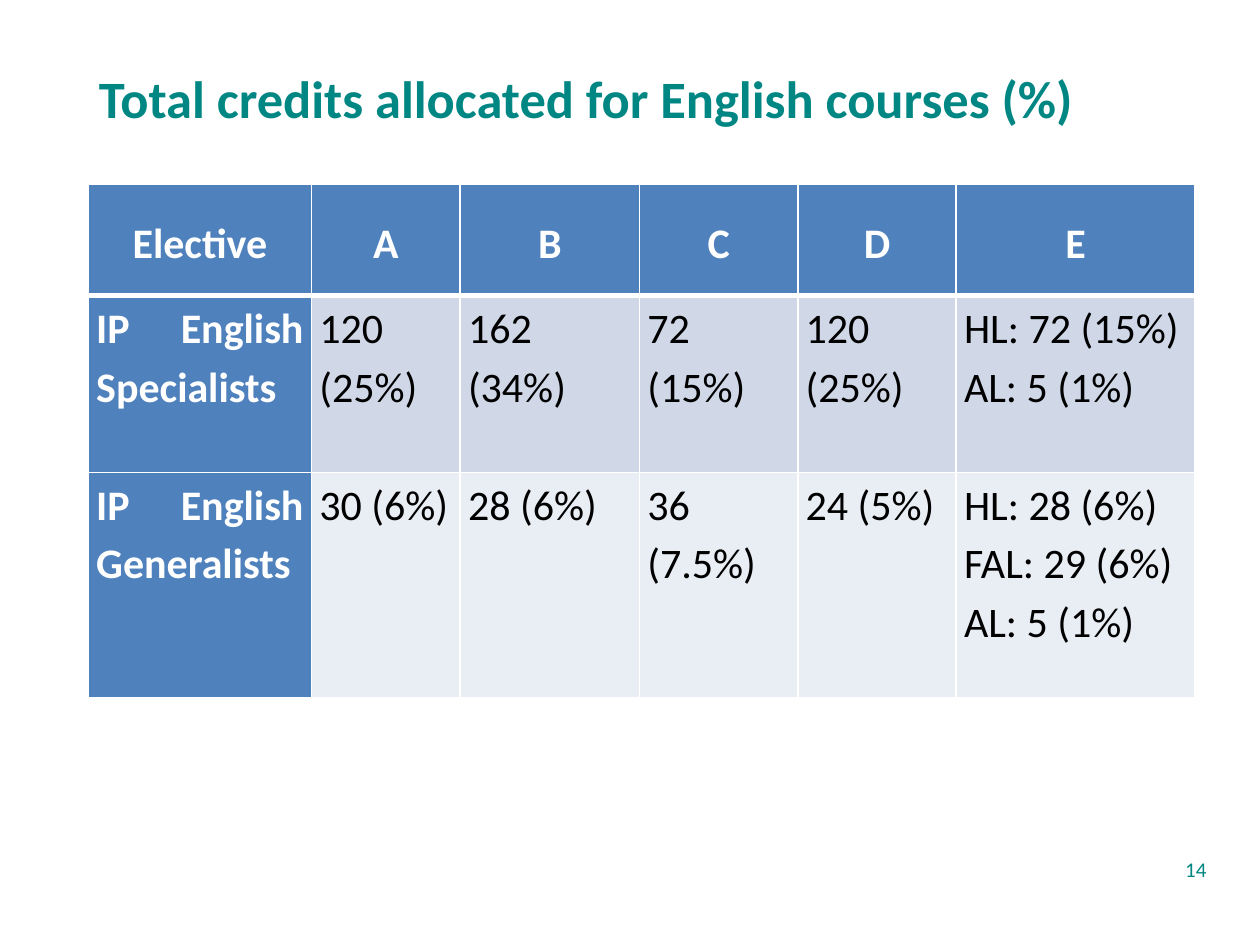
from dataclasses import dataclass

from lxml.etree import SubElement
from pptx import Presentation
from pptx.dml.color import RGBColor
from pptx.enum.text import MSO_ANCHOR as Anchor, PP_ALIGN as Align
from pptx.oxml.ns import qn
from pptx.util import Pt


@dataclass(frozen=True)
class Theme:
    font: str = "Calibri"
    accent: str = "008784"
    header: str = "4F81BD"
    bands: tuple = ("D0D8E8", "E9EDF4")
    light: str = "FFFFFF"
    dark: str = "000000"
    title_size: int = 30
    table_size: int = 24
    number_size: int = 12
    line_spacing: float = 1.15


class Deck:
    def __init__(self, theme):
        self.theme = theme
        self.prs = Presentation()
        self.prs.slide_width, self.prs.slide_height = Pt(720), Pt(540)
        self.s = self.prs.slides.add_slide(self.prs.slide_layouts[6])

    def style(self, p, size, color, bold=False, align=Align.LEFT):
        p.alignment = align
        for r in p.runs:
            r.font.name = self.theme.font
            r.font.size = Pt(size)
            r.font.bold = bold
            r.font.color.rgb = RGBColor.from_string(color)

    def text(self, text, box, size, **look):
        sp = self.s.shapes.add_textbox(*map(Pt, box))
        tf = sp.text_frame
        tf.word_wrap = True
        tf.vertical_anchor = Anchor.MIDDLE
        tf.text = text
        self.style(tf.paragraphs[0], size, self.theme.accent, **look)

    def borders(self, cell, **widths):
        """Draw light cell borders; widths are in points by side (L, R, T, B)."""
        tc_pr = cell._tc.get_or_add_tcPr()
        for side, width in widths.items():
            ln = SubElement(tc_pr, qn(f"a:ln{side}"), w=str(Pt(width)))
            fill = SubElement(ln, qn("a:solidFill"))
            SubElement(fill, qn("a:srgbClr"), val=self.theme.light)

    def cell(self, cell, text, row, col):
        t = self.theme
        is_header = row == 0
        is_label = is_header or col == 0
        cell.margin_left = cell.margin_right = Pt(4.5)
        cell.margin_top = cell.margin_bottom = 0
        cell.vertical_anchor = Anchor.MIDDLE if is_header else Anchor.TOP
        self.borders(cell, L=1, R=1, T=3 if row == 1 else 1, B=3 if is_header else 1)
        cell.fill.solid()
        cell.fill.fore_color.rgb = RGBColor.from_string(
            t.header if is_label else t.bands[(row - 1) % 2])
        cell.text_frame.text = text
        for p in cell.text_frame.paragraphs:
            p.line_spacing = t.line_spacing
            self.style(p, t.table_size, t.light if is_label else t.dark, bold=is_label,
                       align=Align.CENTER if is_header else Align.JUSTIFY)

    def table(self, rows, left, top, widths, heights):
        frame = self.s.shapes.add_table(len(rows), len(widths), Pt(left), Pt(top),
                                        Pt(sum(widths)), Pt(sum(heights)))
        table = frame.table
        for column, width in zip(table.columns, widths):
            column.width = Pt(width)
        for i, (values, height) in enumerate(zip(rows, heights)):
            table.rows[i].height = Pt(height)
            for j, value in enumerate(values):
                self.cell(table.cell(i, j), value, i, j)


CREDITS = [
    ["Elective", "A", "B", "C", "D", "E"],
    ["IP English Specialists", "120 (25%)", "162 (34%)", "72 (15%)", "120 (25%)",
     "HL: 72 (15%)\nAL: 5 (1%)"],
    ["IP English Generalists", "30 (6%)", "28 (6%)", "36 (7.5%)", "24 (5%)",
     "HL: 28 (6%)\nFAL: 29 (6%)\nAL: 5 (1%)"],
]


def main():
    theme = Theme()
    deck = Deck(theme)
    deck.text("Total credits allocated for English courses (%)", (49.5, 34, 648, 44),
              theme.title_size, bold=True)
    deck.table(CREDITS, 50.5, 105.5, widths=[127.5, 85, 102.5, 90.5, 90.5, 136.5],
               heights=[63.5, 101, 129])
    deck.text("14", (528.5, 486, 168, 21.5), theme.number_size, align=Align.RIGHT)
    deck.prs.save("out.pptx")


if __name__ == "__main__":
    main()
